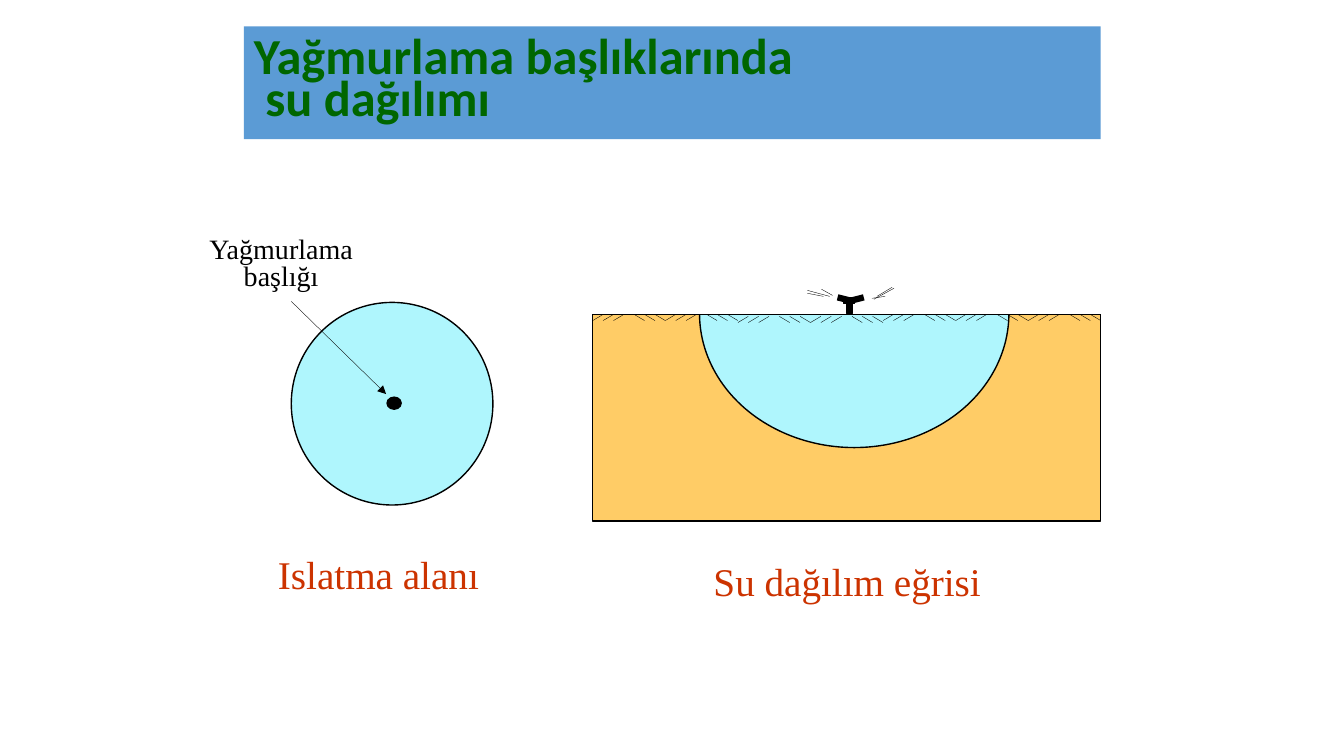
from dataclasses import dataclass
from typing import Any

from lxml.etree import SubElement
from pptx import Presentation
from pptx.dml.color import RGBColor
from pptx.enum.shapes import MSO_CONNECTOR as Connector, MSO_SHAPE as Preset
from pptx.enum.text import MSO_ANCHOR as Anchor, MSO_AUTO_SIZE as AutoSize, PP_ALIGN as Align
from pptx.oxml.ns import qn
from pptx.util import Pt

COLORS = {
    "banner": "5B9BD5",
    "heading": "006600",
    "water": "AFF6FD",
    "soil": "FFCC66",
    "caption": "CC3300",
    "black": "000000",
    "white": "FFFFFF",
}
SERIF = "Times New Roman"
THIN = 0.25
SOIL_LEFT, SURFACE, SOIL_WIDTH, SOIL_HEIGHT = 423.4, 224.6, 362.9, 147.6
PERIODS, CELLS_PER_PERIOD, GAP_CELL = 7, 7, 3
LOWERED_PERIODS = (2, 3)


@dataclass
class Block:
    preset: Preset
    left: float
    top: float
    width: float
    height: float
    fill: str
    outline: str = "black"


@dataclass
class Stroke:
    x1: float
    y1: float
    x2: float
    y2: float
    weight: float = THIN
    arrow: bool = False


@dataclass
class Label:
    lines: list[str]
    left: float
    top: float
    width: float
    height: float
    size: float
    color: str
    spacing: float = 1.0


WETTED_AREA = [
    Block(Preset.FLOWCHART_CONNECTOR, 208.1, 216, 144, 144.7, "water"),
    Block(Preset.FLOWCHART_CONNECTOR, 276.5, 283.7, 10.1, 8.6, "black"),
]
POINTER = Stroke(208.1, 215.3, 275.8, 281.5, arrow=True)
LABELS = [
    Label(["Yağmurlama", "başlığı"], 141.8, 166.3, 118.1, 46.1, 20, "black", 0.8),
    Label(["Islatma alanı"], 190.8, 389.5, 159.1, 41, 28, "caption"),
    Label(["Su dağılım eğrisi"], 497.5, 394.6, 215.3, 41, 28, "caption"),
]
SOIL_PROFILE = [
    Block(Preset.RECTANGLE, SOIL_LEFT, SURFACE, SOIL_WIDTH, SOIL_HEIGHT, "soil"),
    Block(Preset.OVAL, 499.7, 128.2, 221, 191.5, "water"),
    Block(Preset.RECTANGLE, 480.2, 122.4, 252.7, 102.2, "white", "white"),
]
SPRINKLER_BODY = [
    Block(Preset.RECTANGLE, 604.8, 212.4, 4.3, 11.5, "black"),
    Block(Preset.RECTANGLE, 602.6, 212.4, 7.9, 4.3, "black"),
]
SPRINKLER_ARMS = [
    Stroke(598.3, 212.4, 607, 214.6, 4.5),
    Stroke(617, 212.4, 608.4, 214.6, 4.5),
]
SPRAY = [
    Stroke(576.7, 207.4, 592.6, 211.7),
    Stroke(588.2, 211.7, 576.7, 209.5),
    Stroke(594.7, 211, 586.8, 206.6),
    Stroke(638.6, 205.9, 624.2, 213.8),
    Stroke(626.4, 211.7, 637.2, 205.2),
    Stroke(622.8, 213.1, 632.2, 211.7),
]


def rgb(name: str) -> RGBColor:
    return RGBColor.from_string(COLORS[name])


def apply_format(target: Any, values: dict[str, Any]) -> None:
    for name, value in values.items():
        setattr(target, name, value)


def place(shape: Any, left: float, top: float, width: float, height: float) -> None:
    box = {"left": left, "top": top, "width": width, "height": height}
    apply_format(shape, {name: Pt(value) for name, value in box.items()})


def paint(shape: Any, color: str) -> None:
    shape.fill.solid()
    shape.fill.fore_color.rgb = rgb(color)


def draw_title(slide: Any) -> None:
    title = slide.shapes.title
    place(title, 174.2, 18.8, 612, 80.6)
    paint(title, "banner")
    frame = title.text_frame
    frame.text = "Yağmurlama başlıklarında\v su dağılımı"
    apply_format(frame, {"auto_size": AutoSize.NONE, "word_wrap": True,
                         "vertical_anchor": Anchor.MIDDLE})
    paragraph = frame.paragraphs[0]
    apply_format(paragraph, {"alignment": Align.LEFT, "line_spacing": 0.7})
    for run in paragraph.runs:
        apply_format(run.font, {"name": "Calibri", "size": Pt(36), "bold": True})
        run.font.color.rgb = rgb("heading")


def draw_block(slide: Any, block: Block) -> None:
    shape = slide.shapes.add_shape(
        block.preset, Pt(block.left), Pt(block.top), Pt(block.width), Pt(block.height))
    shape.shadow.inherit = False
    paint(shape, block.fill)
    shape.line.color.rgb = rgb(block.outline)
    shape.line.width = Pt(1)


def draw_stroke(slide: Any, stroke: Stroke) -> None:
    connector = slide.shapes.add_connector(
        Connector.STRAIGHT, Pt(stroke.x1), Pt(stroke.y1), Pt(stroke.x2), Pt(stroke.y2))
    connector.line.color.rgb = rgb("black")
    connector.line.width = Pt(stroke.weight)
    if stroke.arrow:
        SubElement(connector.line._get_or_add_ln(), qn("a:tailEnd"), type="triangle")
    SubElement(connector._element.spPr, qn("a:effectLst"))


def draw_label(slide: Any, label: Label) -> None:
    shape = slide.shapes.add_textbox(
        Pt(label.left), Pt(label.top), Pt(label.width), Pt(label.height))
    frame = shape.text_frame
    frame.text = "\n".join(label.lines)
    apply_format(frame, {"word_wrap": False, "auto_size": AutoSize.SHAPE_TO_FIT_TEXT,
                         "vertical_anchor": Anchor.MIDDLE})
    for paragraph in frame.paragraphs:
        apply_format(paragraph, {"alignment": Align.CENTER, "line_spacing": label.spacing})
        apply_format(paragraph.font, {"name": SERIF, "size": Pt(label.size)})
        paragraph.font.color.rgb = rgb(label.color)


def ground_strokes() -> list[Stroke]:
    pitch = SOIL_WIDTH / (PERIODS * CELLS_PER_PERIOD)
    strokes = [Stroke(SOIL_LEFT + pitch, SURFACE, SOIL_LEFT + SOIL_WIDTH, SURFACE)]
    for period in range(PERIODS):
        top = SURFACE + (1.4 if period in LOWERED_PERIODS else 0)
        for cell in range(CELLS_PER_PERIOD):
            if cell == GAP_CELL:
                continue
            left = SOIL_LEFT + (period * CELLS_PER_PERIOD + cell) * pitch
            right = left + pitch
            start, end = (right, left) if cell < GAP_CELL else (left, right)
            strokes.append(Stroke(start, top, end, top + 4.4))
    return strokes


def main() -> None:
    presentation = Presentation()
    apply_format(presentation, {"slide_width": Pt(960), "slide_height": Pt(540)})
    slide = presentation.slides.add_slide(presentation.slide_layouts[5])
    draw_title(slide)
    for block in WETTED_AREA:
        draw_block(slide, block)
    draw_stroke(slide, POINTER)
    for label in LABELS:
        draw_label(slide, label)
    for block in SOIL_PROFILE:
        draw_block(slide, block)
    for stroke in ground_strokes():
        draw_stroke(slide, stroke)
    for block in SPRINKLER_BODY:
        draw_block(slide, block)
    for stroke in SPRINKLER_ARMS + SPRAY:
        draw_stroke(slide, stroke)
    presentation.save("out.pptx")


if __name__ == "__main__":
    main()
